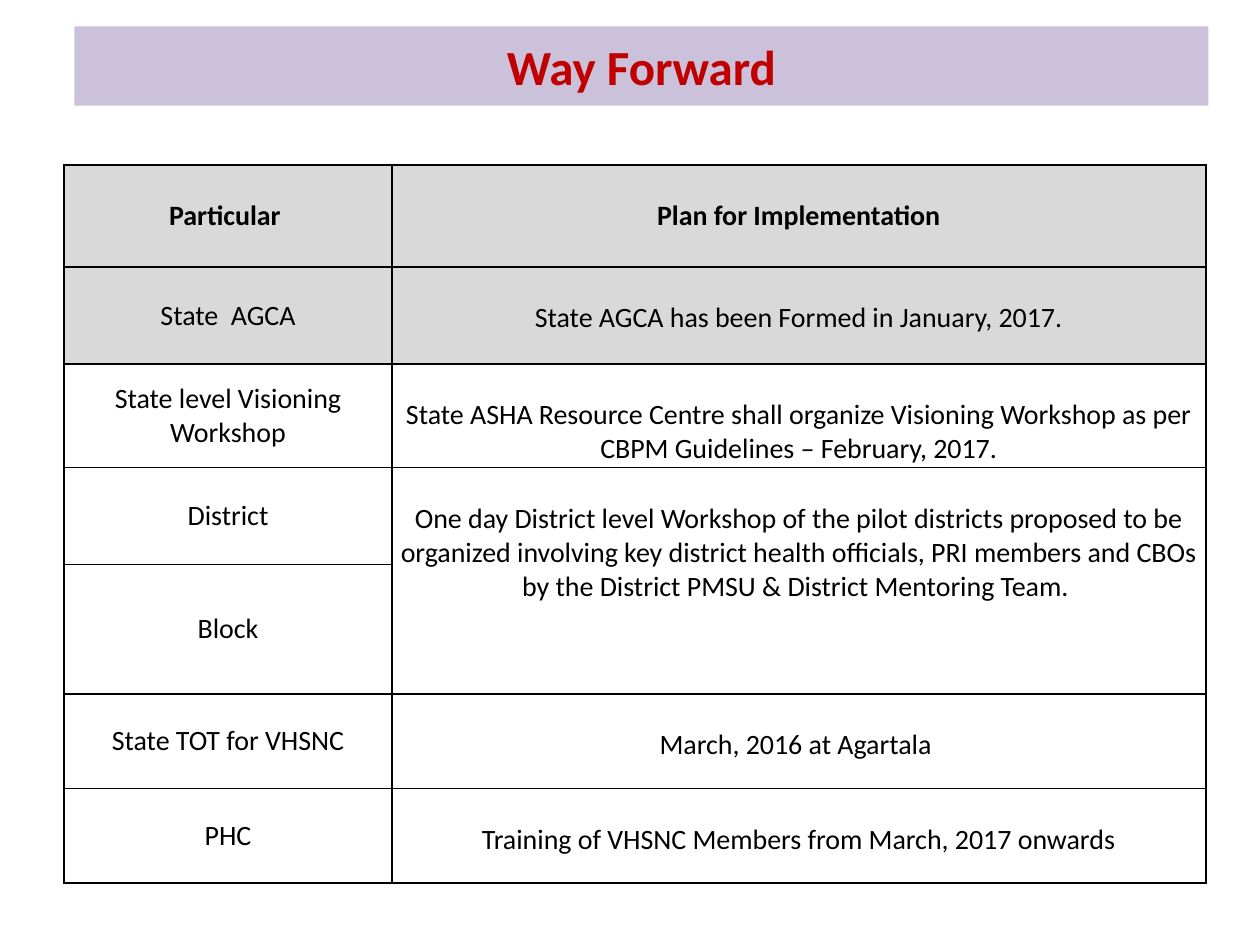
from lxml import etree
from pptx import Presentation
from pptx.dml.color import RGBColor
from pptx.enum import shapes, text
from pptx.oxml import ns
from pptx.util import Inches, Pt

BLACK, RED, LILAC, GREY, WHITE = "000000", "C00000", "CCC1DA", "D9D9D9", "FFFFFF"
LINE_HEIGHT = 0.27  # one line of 16 pt text, in inches

COLUMNS = [2.6, 6.46]
ROWS = [  # height, particular, plan
    (0.81, "Particular ", "Plan for Implementation"),
    (0.77, "State  AGCA", "State AGCA has been Formed in January, 2017."),
    (0.82, "State level Visioning Workshop",
     "State ASHA Resource Centre shall organize Visioning Workshop as per "
     "CBPM Guidelines – February, 2017."),
    (0.77, "District",
     "One day District level Workshop of the pilot districts proposed to be "
     "organized involving key district health officials, PRI members and CBOs "
     "by the District PMSU & District Mentoring Team. "),
    (1.03, "Block", None),  # None: the plan above covers this row too
    (0.75, "State TOT for VHSNC", "March, 2016 at Agartala "),
    (0.75, "PHC", "Training of VHSNC Members from March, 2017 onwards"),
]
SHADED_ROWS = 2


def rgb(value):
    return RGBColor.from_string(value)


class SlideBuilder:
    font = "Calibri"

    def __init__(self, slide):
        self.s = slide

    def add_text(self, tf, content, size, color, bold=False):
        p = tf.paragraphs[0]
        p.alignment = text.PP_ALIGN.CENTER
        r = p.add_run()
        r.text = content
        r.font.name, r.font.size, r.font.bold = self.font, Pt(size), bold
        r.font.color.rgb = rgb(color)

    def title(self, content, left, top, width, height):
        sp = self.s.shapes.add_shape(
            shapes.MSO_SHAPE.RECTANGLE,
            Inches(left), Inches(top), Inches(width), Inches(height))
        sp.shadow.inherit = False
        sp.fill.solid()
        sp.fill.fore_color.rgb = rgb(LILAC)
        sp.line.fill.background()
        tf = sp.text_frame
        tf.word_wrap = True
        tf.vertical_anchor = text.MSO_ANCHOR.MIDDLE
        self.add_text(tf, content, 28, RED, bold=True)

    def borders(self, cell, color=BLACK, width=1):
        """Outline all four sides; border elements must precede the fill."""
        tc_pr = cell._tc.get_or_add_tcPr()
        for i, side in enumerate(("lnL", "lnR", "lnT", "lnB")):
            ln = etree.Element(ns.qn(f"a:{side}"), w=str(Pt(width)))
            fill = etree.SubElement(ln, ns.qn("a:solidFill"))
            etree.SubElement(fill, ns.qn("a:srgbClr"), val=color)
            tc_pr.insert(i, ln)

    def cell(self, cell, content, fill, bold, is_plan):
        cell.fill.solid()
        cell.fill.fore_color.rgb = rgb(fill)
        self.borders(cell)
        cell.margin_left = cell.margin_right = Inches(0.07)
        cell.margin_top = Inches(LINE_HEIGHT if is_plan else 0)
        cell.margin_bottom = 0
        anchor = text.MSO_ANCHOR
        cell.vertical_anchor = anchor.TOP if is_plan else anchor.MIDDLE
        if content:
            self.add_text(cell.text_frame, content, 16, BLACK, bold)

    def table(self, rows, columns, left, top):
        heights = [row[0] for row in rows]
        table = self.s.shapes.add_table(
            len(rows), len(columns), Inches(left), Inches(top),
            Inches(sum(columns)), Inches(sum(heights))).table
        for column, width in zip(table.columns, columns):
            column.width = Inches(width)
        for i, (height, *contents) in enumerate(rows):
            table.rows[i].height = Inches(height)
            fill = GREY if i < SHADED_ROWS else WHITE
            for j, content in enumerate(contents):
                self.cell(table.cell(i, j), content, fill, i == 0, j == 1)
                if content is None:
                    table.cell(i - 1, j).merge(table.cell(i, j))


def main():
    prs = Presentation()
    prs.slide_width, prs.slide_height = Inches(10), Inches(7.5)
    builder = SlideBuilder(prs.slides.add_slide(prs.slide_layouts[6]))
    builder.title("Way Forward", 0.59, 0.21, 9, 0.63)
    builder.table(ROWS, COLUMNS, 0.51, 1.31)
    prs.save("out.pptx")


if __name__ == "__main__":
    main()
